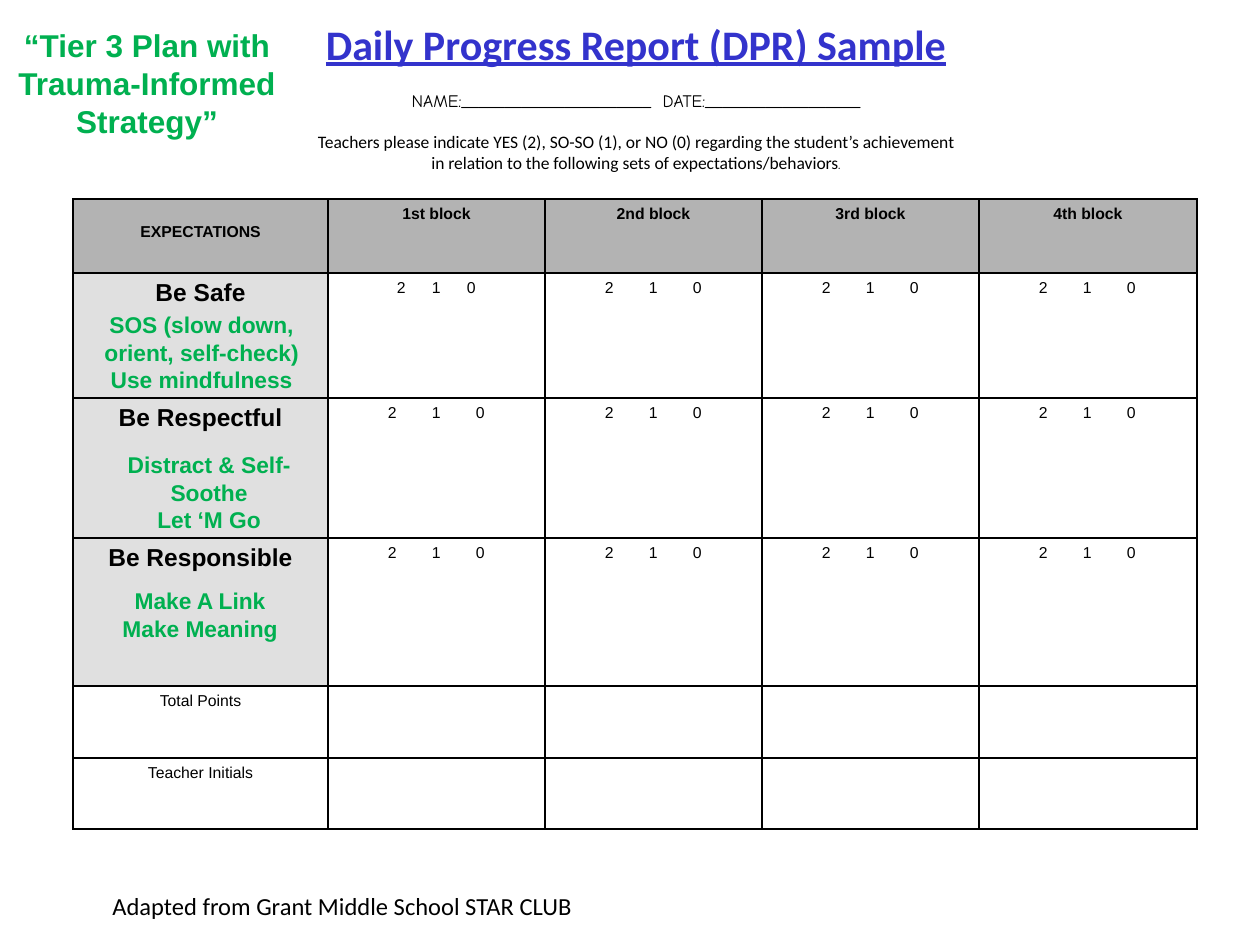
import pptx
import pptx.util
import pptx.dml.color
import pptx.enum.text
import pptx.oxml

PX = 914400 / 126
COLORS = {"ink": "000000", "title": "3333CC", "strategy": "00B050",
          "header": "B3B3B3", "expectation": "E0E0E0"}

TITLE = {"name": "Calibri", "size": 24, "bold": True, "underline": True, "color": "title"}
FIELD = {"name": "Comic Neue", "size": 10, "color": "ink"}
GAP = {**FIELD, "spc": 340}
DIRECTIONS = {"name": "Calibri", "size": 10, "color": "ink"}
PERIOD = {"name": "Comic Neue", "size": 9, "color": "ink"}
CREDIT = {"name": "Calibri", "size": 14, "color": "ink"}
PLAN = {"name": "Arial", "size": 18, "bold": True, "color": "strategy"}
STRATEGY = {**PLAN, "size": 13}
CELL = {"name": "Arial", "size": 9, "bold": False, "color": "ink"}
HEAD = {**CELL, "bold": True}
EXPECTATION = {**HEAD, "size": 14}

HEADING = [
    (0, [("Daily Progress Report (DPR) Sample", TITLE)]),
    (12, [("NAME:______________________", FIELD), (" ", GAP),
          ("DATE:__________________", FIELD)]),
    (11.5, [("Teachers please indicate YES (2), SO-SO (1), or NO (0) regarding "
             "the student’s achievement\vin relation to the following sets of "
             "expectations/behaviors", DIRECTIONS), (".", PERIOD)]),
]
NOTES = [
    ((0, 20, 294, 127), ["“Tier 3 Plan with Trauma-Informed Strategy”"], PLAN),
    ((64, 305, 275, 123), ["SOS (slow down, orient, self-check)", "Use mindfulness"], STRATEGY),
    ((83, 445, 252, 96), ["Distract & Self-Soothe", "Let ‘M Go"], STRATEGY),
    ((74, 581, 252, 68), ["Make A Link", "Make Meaning"], STRATEGY),
]
BLOCKS = ["1st block", "2nd block", "3rd block", "4th block"]
EXPECTATIONS = ["Be Safe", "Be Respectful", "Be Responsible"]
TOTALS = ["Total Points", "Teacher Initials"]
SCORES = "2\t1\t0"
COLS = [255, 217, 217, 217, 218]
ROWS = [74, 125, 140, 148, 72, 71]
TABLE_AT = (73, 199)
CENTER = pptx.enum.text.PP_ALIGN.CENTER
LEFT = pptx.enum.text.PP_ALIGN.LEFT


def px(n):
    return pptx.util.Emu(round(n * PX))


def rgb(name):
    return pptx.dml.color.RGBColor.from_string(COLORS[name])


def write(p, runs, align=CENTER, before=0):
    p.alignment = align
    if before:
        p.space_before = pptx.util.Pt(before)
    for text, fmt in runs:
        start = len(p.runs)
        for i, line in enumerate(text.split("\v")):
            if i:
                p.add_line_break()
            p.add_run().text = line
        for r in p.runs[start:]:
            for key, value in fmt.items():
                if key == "color":
                    r.font.color.rgb = rgb(value)
                elif key == "size":
                    r.font.size = pptx.util.Pt(value)
                elif key == "spc":
                    r.font._element.set("spc", str(value))
                else:
                    setattr(r.font, key, value)


def add_text(s, box, paragraphs, align=CENTER, wrap=True):
    tf = s.shapes.add_textbox(*map(px, box)).text_frame
    tf.word_wrap = wrap
    for i, (before, runs) in enumerate(paragraphs):
        p = tf.add_paragraph() if i else tf.paragraphs[0]
        write(p, runs, align, before)


def set_borders(cell):
    ns = pptx.oxml.ns.nsdecls("a")
    for i, side in enumerate(("lnL", "lnR", "lnT", "lnB")):
        line = pptx.oxml.parse_xml(
            f'<a:{side} {ns} w="12700"><a:solidFill>'
            f'<a:srgbClr val="{COLORS["ink"]}"/></a:solidFill></a:{side}>')
        cell._tc.get_or_add_tcPr().insert(i, line)


def write_scores(cell, start, step):
    cell.margin_left = px(start)
    p = cell.text_frame.paragraphs[0]
    tabs = "".join(f'<a:tab pos="{px(step * n)}" algn="l"/>' for n in (1, 2))
    ns = pptx.oxml.ns.nsdecls("a")
    p._p.get_or_add_pPr().append(pptx.oxml.parse_xml(f"<a:tabLst {ns}>{tabs}</a:tabLst>"))
    write(p, [(SCORES, CELL)], LEFT)


def add_report(s):
    frame = s.shapes.add_table(len(ROWS), len(COLS), *map(px, (*TABLE_AT, sum(COLS), sum(ROWS))))
    table = frame.table
    for col, width in zip(table.columns, COLS):
        col.width = px(width)
    for row, height in zip(table.rows, ROWS):
        row.height = px(height)
    labels = ([("EXPECTATIONS", HEAD)] + [(t, EXPECTATION) for t in EXPECTATIONS]
              + [(t, CELL) for t in TOTALS])
    scored = range(1, len(EXPECTATIONS) + 1)
    for r, label in enumerate(labels):
        for c in range(len(COLS)):
            cell = table.cell(r, c)
            fill = "header" if r == 0 else "expectation" if c == 0 and r in scored else None
            if fill:
                cell.fill.solid()
                cell.fill.fore_color.rgb = rgb(fill)
            else:
                cell.fill.background()
            set_borders(cell)
            if c == 0:
                write(cell.text_frame.paragraphs[0], [label])
            elif r == 0:
                write(cell.text_frame.paragraphs[0], [(BLOCKS[c - 1], HEAD)])
            elif r in scored:
                write_scores(cell, *((69, 35) if r == c == 1 else (60, 44)))
    table.cell(0, 0).margin_top = px(24)


def main():
    prs = pptx.Presentation()
    prs.slide_width, prs.slide_height = px(1260), px(945)
    s = prs.slides.add_slide(prs.slide_layouts[6])
    add_text(s, (296, 12, 680, 168), HEADING, wrap=False)
    add_report(s)
    add_text(s, (100, 885, 554, 43),
             [(0, [("Adapted from Grant Middle School STAR CLUB", CREDIT)])], LEFT)
    for box, lines, fmt in NOTES:
        add_text(s, box, [(0, [(line, fmt)]) for line in lines])
    prs.save("out.pptx")


if __name__ == "__main__":
    main()
